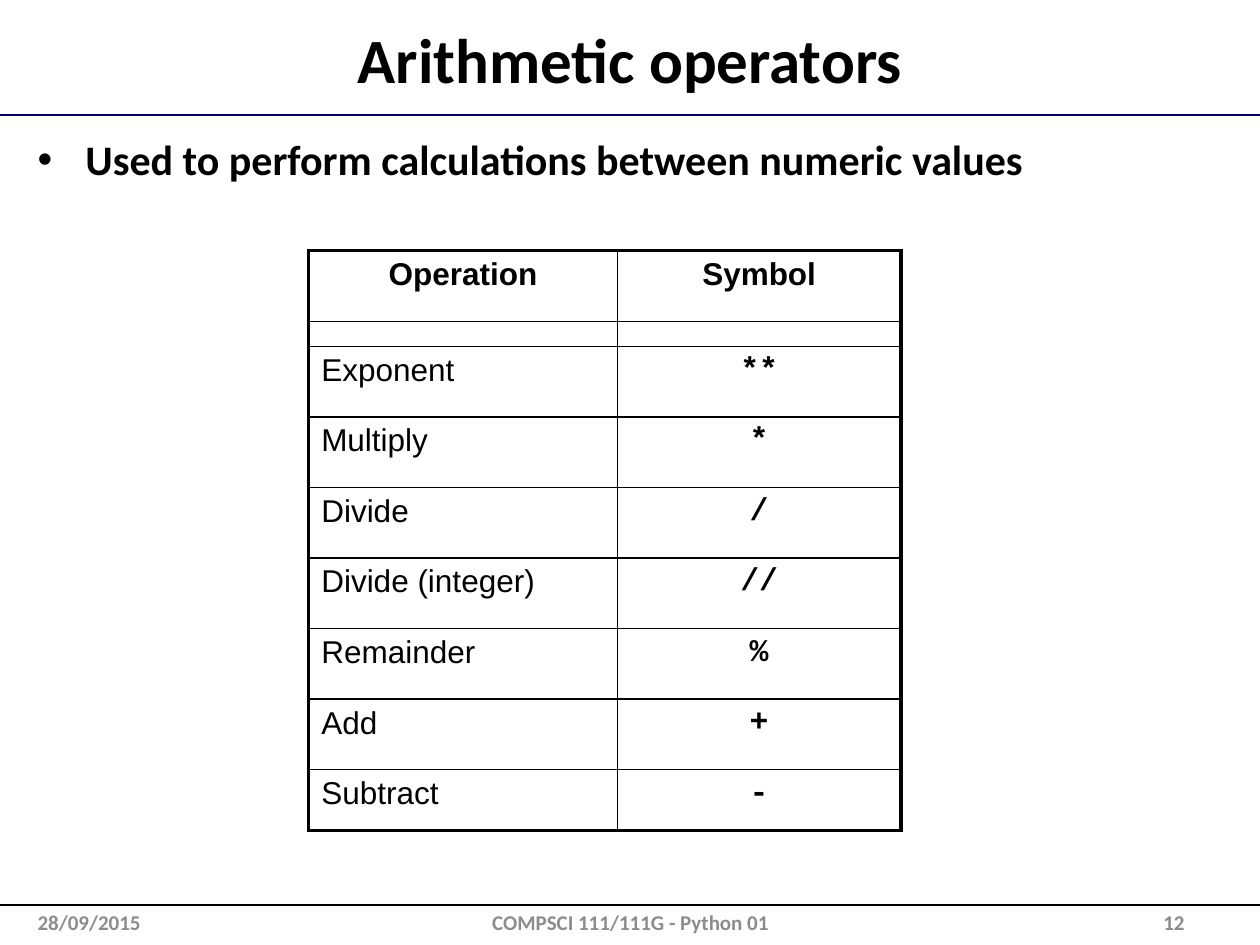
from lxml import etree
from pptx import Presentation
from pptx.dml.color import RGBColor
from pptx.enum.shapes import MSO_CONNECTOR
from pptx.enum.text import MSO_ANCHOR, PP_ALIGN
from pptx.oxml.ns import qn
from pptx.util import Inches, Pt

LEFT, CENTER, RIGHT = PP_ALIGN.LEFT, PP_ALIGN.CENTER, PP_ALIGN.RIGHT
MIDDLE, TOP = MSO_ANCHOR.MIDDLE, MSO_ANCHOR.TOP
STRAIGHT = MSO_CONNECTOR.STRAIGHT


def write(tf, text, size, color="000000", font="Calibri", bold=True, align=LEFT, anchor=TOP):
    """Put one formatted paragraph in a text frame and return it."""
    tf.text = text
    tf.word_wrap = True
    tf.vertical_anchor = anchor
    p = tf.paragraphs[0]
    p.alignment = align
    f = p.runs[0].font
    f.size, f.name, f.bold = Pt(size), font, bold
    f.color.rgb = RGBColor.from_string(color)
    return p


def set_border(cell, side, width, color="000000"):
    tcPr = cell._tc.get_or_add_tcPr()
    ln = etree.SubElement(tcPr, qn(f"a:ln{side}"), w=str(Pt(width)))
    fill = etree.SubElement(ln, qn("a:solidFill"))
    etree.SubElement(fill, qn("a:srgbClr"), val=color)


prs = Presentation()
prs.slide_width, prs.slide_height = Inches(10), Inches(7.5)
s = prs.slides.add_slide(prs.slide_layouts[5])

# Rules below the title and above the footer
for y, color in ((0.91, "000066"), (7.18, "000000")):
    line = s.shapes.add_connector(STRAIGHT, 0, Inches(y), prs.slide_width, Inches(y))
    line.line.color.rgb = RGBColor.from_string(color)
    line.line.width = Pt(1)
    etree.SubElement(line._element.spPr, qn("a:effectLst"))

title = s.shapes.title
title.left, title.top = Inches(0.1), Inches(0.12)
title.width, title.height = Inches(9.8), Inches(0.69)
write(title.text_frame, "Arithmetic operators", 36, align=CENTER, anchor=MIDDLE)

body = s.shapes.add_textbox(Inches(0.2), Inches(1.01), Inches(9.6), Inches(5.98))
p = write(body.text_frame, "Used to perform calculations between numeric values", 24)
p.space_before = Pt(4.8)
pPr = p._p.get_or_add_pPr()
pPr.set("marL", str(Inches(0.38)))
pPr.set("indent", str(-Inches(0.38)))
etree.SubElement(pPr, qn("a:buFont"), typeface="Arial")
etree.SubElement(pPr, qn("a:buChar"), char="•")

# Operators table: header, thin spacer row, one row per operator
rows = [
    ("Operation", "Symbol"),
    ("", ""),
    ("Exponent", "**"),
    ("Multiply", "*"),
    ("Divide", "/"),
    ("Divide (integer)", "//"),
    ("Remainder", "%"),
    ("Add", "+"),
    ("Subtract", "-"),
]
heights = [0.56, 0.2] + [0.56] * 6 + [0.48]
widths = [2.45, 2.25]
last_row, last_col = len(rows) - 1, len(widths) - 1
table = s.shapes.add_table(len(rows), len(widths), Inches(2.45), Inches(1.99),
                           Inches(sum(widths)), Inches(sum(heights))).table
table.first_row = table.horz_banding = False
for col, width in zip(table.columns, widths):
    col.width = Inches(width)

for i, (texts, height) in enumerate(zip(rows, heights)):
    table.rows[i].height = Inches(height)
    for j, text in enumerate(texts):
        cell = table.cell(i, j)
        outer = {"L": j == 0, "R": j == last_col, "T": i == 0, "B": i == last_row}
        for side, is_outer in outer.items():
            set_border(cell, side, 2.25 if is_outer else 1)
        cell.fill.background()
        if text:
            header, symbol = i == 0, j == 1
            write(cell.text_frame, text, 18,
                  font="Courier New" if symbol and not header else "Arial",
                  bold=header or symbol, align=CENTER if header or symbol else LEFT)
        else:
            cell.margin_top = cell.margin_bottom = 0
            etree.SubElement(cell.text_frame.paragraphs[0]._p, qn("a:endParaRPr"), sz="800")

footers = [
    ("28/09/2015", 0.2, 2.33, LEFT),
    ("COMPSCI 111/111G - Python 01", 3.42, 3.17, CENTER),
    ("12", 7.17, 2.33, RIGHT),
]
for text, x, width, align in footers:
    sp = s.shapes.add_textbox(Inches(x), Inches(7.18), Inches(width), Inches(0.27))
    write(sp.text_frame, text, 12, "8C8C8C", align=align, anchor=MIDDLE)

prs.save("out.pptx")
